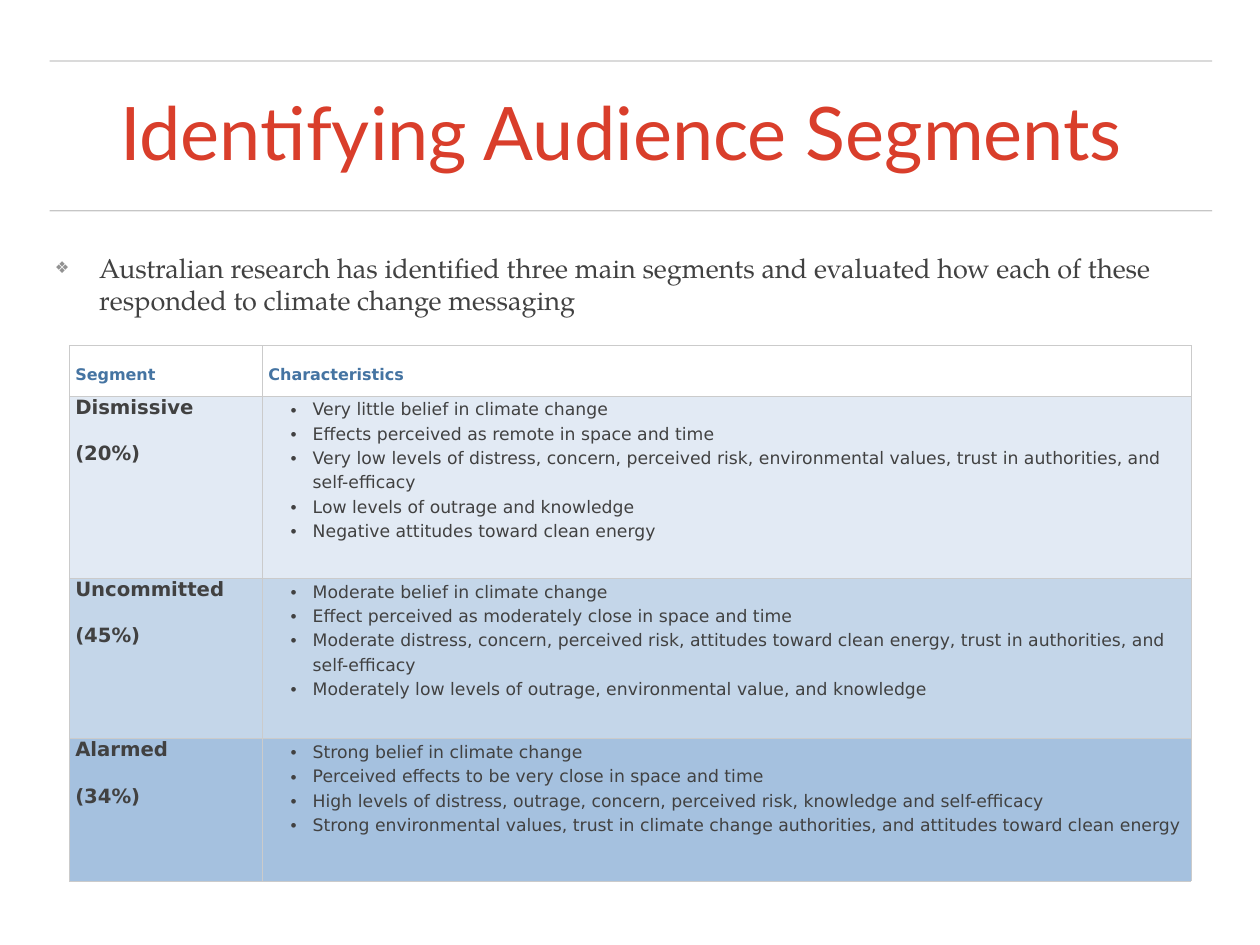
from lxml import etree
from pptx import Presentation
from pptx.dml.color import RGBColor
from pptx.enum.shapes import MSO_CONNECTOR
from pptx.enum.text import MSO_ANCHOR, MSO_AUTO_SIZE, PP_ALIGN
from pptx.oxml import parse_xml
from pptx.oxml.ns import nsdecls, qn
from pptx.util import Inches, Pt

STRAIGHT = MSO_CONNECTOR.STRAIGHT
MIDDLE, TOP = MSO_ANCHOR.MIDDLE, MSO_ANCHOR.TOP
CENTER, LEFT = PP_ALIGN.CENTER, PP_ALIGN.LEFT

COLORS = {
    "rule": "444444",
    "title": "D93E2B",
    "text": "414141",
    "intro bullet": "929292",
    "header": "4574A2",
    "header fill": "FFFFFF",
    "border": "CBCBCB",
}
TABLE_FONT = "DejaVu Sans"

HEADERS = ["Segment", "Characteristics"]
SEGMENTS = [
    ("Dismissive", "(20%)", "E2EAF4", [
        "Very little belief in climate change",
        "Effects perceived as remote in space and time",
        "Very low levels of distress, concern, perceived risk, environmental values, "
        "trust in authorities, and self-efficacy",
        "Low levels of outrage and knowledge",
        "Negative attitudes toward clean energy",
    ]),
    ("Uncommitted", "(45%)", "C4D6E9", [
        "Moderate belief in climate change",
        "Effect perceived as moderately close in space and time",
        "Moderate distress, concern, perceived risk, attitudes toward clean energy, "
        "trust in authorities, and self-efficacy",
        "Moderately low levels of outrage, environmental value, and knowledge",
    ]),
    ("Alarmed", "(34%)", "A5C1DF", [
        "Strong belief in climate change",
        "Perceived effects to be very close in space and time",
        "High levels of distress, outrage, concern, perceived risk, knowledge and self-efficacy",
        "Strong environmental values, trust in climate change authorities, "
        "and attitudes toward clean energy",
    ]),
]
COLUMN_WIDTHS = [2.18, 10.48]
ROW_HEIGHTS = [0.57, 2.06, 1.81, 1.61]


def style(paragraph, font, size, color, bold=False, spacing=1.0, bullet=None, indent=0,
          bullet_xml=""):
    """Format a paragraph; a bullet hangs by half or all of the left margin given by indent."""
    if bullet:
        properties = paragraph._p.get_or_add_pPr()
        properties.set("marL", str(Inches(0.5)))
        properties.set("indent", str(-Inches(indent)))
        wrapper = parse_xml(
            f'<a:pPr {nsdecls("a")}>{bullet_xml}<a:buFont typeface="Arial"/>'
            f'<a:buChar char="{bullet}"/></a:pPr>')
        properties.extend(list(wrapper))
    paragraph.line_spacing = spacing
    paragraph.font.name = font
    paragraph.font.size = Pt(size)
    paragraph.font.bold = bold
    paragraph.font.color.rgb = RGBColor.from_string(color)


def fill_cell(cell, texts, fill, anchor):
    """Set a cell's paragraphs, fill, margins and borders."""
    cell.text = "\n".join(texts)
    cell.margin_left = cell.margin_right = Inches(0.07)
    cell.margin_top = cell.margin_bottom = 0
    cell.vertical_anchor = anchor
    cell.fill.solid()
    cell.fill.fore_color.rgb = RGBColor.from_string(fill)
    for position, side in enumerate(["lnL", "lnR", "lnT", "lnB"]):
        cell._tc.tcPr.insert(position, parse_xml(
            f'<a:{side} {nsdecls("a")} w="{Pt(0.5)}"><a:solidFill>'
            f'<a:srgbClr val="{COLORS["border"]}"/></a:solidFill></a:{side}>'))
    return cell.text_frame.paragraphs


prs = Presentation()
prs.slide_width, prs.slide_height = Inches(14.22), Inches(10.67)
slide = prs.slides.add_slide(prs.slide_layouts[5])

# Rules above and below the title
for rule_y in (0.69, 2.38):
    rule = slide.shapes.add_connector(
        STRAIGHT, Inches(0.56), Inches(rule_y), Inches(13.68), Inches(rule_y))
    rule.line.width = Pt(1)
    rule.line.color.rgb = RGBColor.from_string(COLORS["rule"])
    rule_color = rule.line._ln.find(".//" + qn("a:srgbClr"))
    etree.SubElement(rule_color, qn("a:alpha")).set("val", "30000")
    etree.SubElement(rule._element.spPr, qn("a:effectLst"))

# Title and introduction
title = slide.shapes.title
title.left, title.top, title.width, title.height = (
    Inches(0.56), Inches(0.88), Inches(13.11), Inches(1.33))
intro = slide.shapes.add_textbox(Inches(0.56), Inches(2.54), Inches(13.11), Inches(1.33))
for box, text in [
    (title, "Identifying Audience Segments "),
    (intro, "Australian research has identified three main segments and evaluated "
            "how each of these responded to climate change messaging"),
]:
    frame = box.text_frame
    frame.text = text
    frame.word_wrap = True
    frame.auto_size = MSO_AUTO_SIZE.NONE
    frame.vertical_anchor = MIDDLE
    frame.margin_left = frame.margin_right = Inches(0.06)
    frame.margin_top = frame.margin_bottom = Inches(0.06)

title_line = title.text_frame.paragraphs[0]
title_line.alignment = CENTER
style(title_line, "Lato", 60, COLORS["title"], spacing=0.9)

intro_line = intro.text_frame.paragraphs[0]
intro_line.alignment = LEFT
style(intro_line, "TeX Gyre Pagella", 22, COLORS["text"], bullet="❖", indent=0.5,
      bullet_xml=f'<a:buClr><a:srgbClr val="{COLORS["intro bullet"]}"/></a:buClr>'
                 '<a:buSzPct val="60000"/>')

# Segment table
table = slide.shapes.add_table(
    len(ROW_HEIGHTS), len(COLUMN_WIDTHS), Inches(0.78), Inches(3.9),
    Inches(sum(COLUMN_WIDTHS)), Inches(sum(ROW_HEIGHTS))).table
table.first_row = table.horz_banding = False
for column, width in zip(table.columns, COLUMN_WIDTHS):
    column.width = Inches(width)
for row, height in zip(table.rows, ROW_HEIGHTS):
    row.height = Inches(height)

for column, header in enumerate(HEADERS):
    for line in fill_cell(table.cell(0, column), [header], COLORS["header fill"], MIDDLE):
        style(line, TABLE_FONT, 13, COLORS["header"], bold=True, spacing=1.5)

for row, (segment, share, fill, traits) in enumerate(SEGMENTS, start=1):
    name_line, share_line = fill_cell(table.cell(row, 0), [segment, share], fill, TOP)
    style(name_line, TABLE_FONT, 16, COLORS["text"], bold=True)
    style(share_line, TABLE_FONT, 16, COLORS["text"], bold=True, spacing=1.5)
    share_line.space_before = Pt(10)
    for trait_line in fill_cell(table.cell(row, 1), traits, fill, TOP):
        style(trait_line, TABLE_FONT, 14, COLORS["text"], spacing=1.2, bullet="•", indent=0.25)

prs.save("out.pptx")
